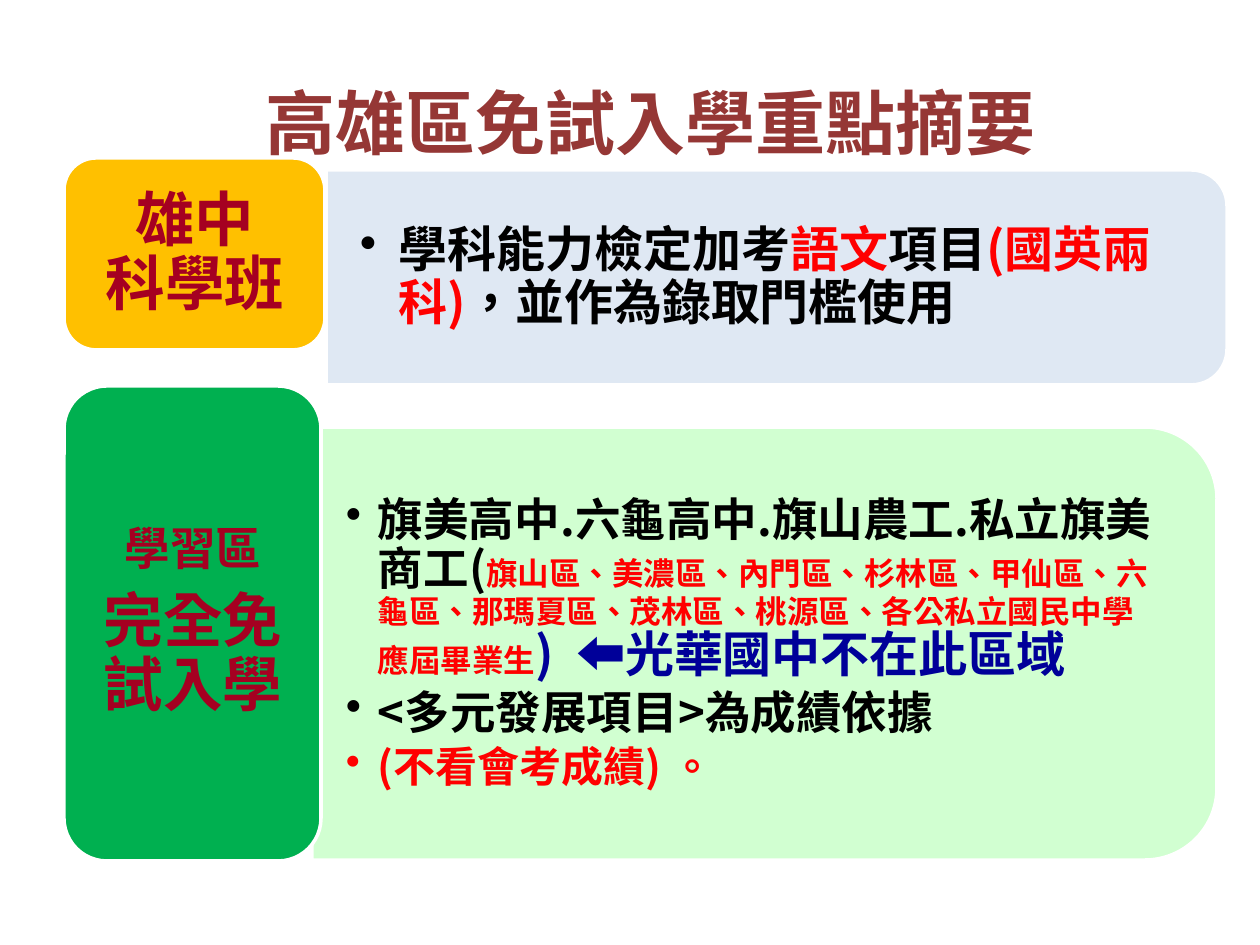
from dataclasses import dataclass

from lxml.etree import SubElement
from pptx import Presentation
from pptx.dml.color import RGBColor
from pptx.enum.shapes import MSO_SHAPE as Shape
from pptx.enum.text import MSO_ANCHOR as Anchor, PP_ALIGN as Align
from pptx.oxml.ns import qn
from pptx.util import Emu, Pt

EMU_PER_PX = 914400 / 126


@dataclass(frozen=True)
class Theme:
    """Colours, fonts and type sizes of the slide."""
    font: str = "Noto Sans CJK SC"
    title_font: str = "Calibri"
    title: str = "953735"
    label: str = "A50021"
    body: str = "000000"
    accent: str = "FF0000"
    remark: str = "000099"
    border: str = "FFFFFF"
    gold: str = "FFC000"
    green: str = "00B050"
    pale_blue: str = "DCE6F2"
    pale_green: str = "CCFFCC"
    title_size: int = 40
    label_size: int = 34
    large: int = 28
    medium: int = 26
    small: int = 24
    detail: int = 18


THEME = Theme()


def px(length):
    """Turn pixels into EMU."""
    return Emu(round(length * EMU_PER_PX))


def apply(target, values):
    """Set attributes from a dict of format values."""
    for name, value in values.items():
        setattr(target, name, value)


def add_block(page, kind, box, color, rotation=0, opacity=None):
    """Add a filled shape with a white border."""
    block = page.shapes.add_shape(kind, *map(px, box))
    block.shadow.inherit = False
    block.rotation = rotation
    block.fill.solid()
    block.fill.fore_color.rgb = RGBColor.from_string(color)
    block.line.color.rgb = RGBColor.from_string(THEME.border)
    block.line.width = Pt(2)
    if opacity:
        tint = block.fill._xPr.find(qn("a:solidFill"))[0]
        SubElement(tint, qn("a:alpha"), val=str(opacity * 1000))


def add_panel(page, box, color):
    """Add a panel whose two rounded corners face right."""
    left, top, width, height = box
    shift = (width - height) / 2
    upright = (left + shift, top - shift, height, width)
    add_block(page, Shape.ROUND_2_SAME_RECTANGLE, upright, color, 90, 90)


def set_space_after(para, percent):
    """Give the paragraph a proportional space after."""
    para.space_after = Pt(0)
    space = para._p.pPr.find(qn("a:spcAft"))
    space.remove(space[0])
    SubElement(space, qn("a:spcPct"), val=str(percent * 1000))


def set_bullet(para, indent):
    """Give the paragraph a round bullet with a hanging indent."""
    para.level = 1
    props = para._p.get_or_add_pPr()
    props.set("marL", str(px(indent)))
    props.set("indent", str(-px(indent)))
    SubElement(props, qn("a:buChar"), char="•")


def add_span(para, text, size, color, font):
    """Add one bold run of text."""
    span = para.add_run()
    span.text = text
    apply(span.font, {"size": Pt(size), "bold": True, "name": font})
    span.font.color.rgb = RGBColor.from_string(color)
    props = span._r.get_or_add_rPr()
    props.set("lang", "zh-TW")
    SubElement(props, qn("a:ea"), typeface=THEME.font)


def add_text(page, box, paras, inset, anchor=Anchor.MIDDLE, font=THEME.font,
             spacing=0.9, after=None, indent=None):
    """Add a text box whose paragraphs are lists of runs."""
    frame = page.shapes.add_textbox(*map(px, box)).text_frame
    left, top, right, bottom = map(px, inset)
    apply(frame, {"word_wrap": True, "vertical_anchor": anchor,
                  "margin_left": left, "margin_top": top,
                  "margin_right": right, "margin_bottom": bottom})
    for index, spans in enumerate(paras):
        para = frame.add_paragraph() if index else frame.paragraphs[0]
        apply(para, {"line_spacing": spacing,
                     "alignment": Align.LEFT if indent else Align.CENTER})
        if after:
            set_space_after(para, after)
        if indent:
            set_bullet(para, indent)
        for text, size, color in spans:
            add_span(para, text, size, color, font)


def add_science_class(page):
    """Add the row on the science class."""
    size = THEME.large
    add_panel(page, (326, 170, 901, 215), THEME.pale_blue)
    add_text(page, (326, 181, 891, 194), [[
        ("學科能力檢定加考", size, THEME.body),
        ("語文", size, THEME.accent),
        ("項目", size, THEME.body),
        ("(國英兩科)", size, THEME.accent),
        ("，並作為錄取門檻使用", size, THEME.body),
    ]], (34, 18, 34, 18), after=15, indent=39)
    add_block(page, Shape.ROUNDED_RECTANGLE, (64, 158, 261, 192), THEME.gold)
    add_text(page, (74, 168, 242, 173), [
        [(line, THEME.label_size, THEME.label)] for line in ("雄中", "科學班")
    ], (18, 9, 18, 9))


def add_learning_area(page):
    """Add the row on the learning area."""
    add_panel(page, (312, 427, 905, 433), THEME.pale_green)
    add_text(page, (312, 449, 883, 391), [
        [("旗美高中.六龜高中.旗山農工.私立旗美商工(", THEME.medium, THEME.body),
         ("旗山區、美濃區、內門區、杉林區、甲仙區、六龜區、那瑪夏區、茂林區、"
          "桃源區、各公私立國民中學應屆畢業生", THEME.detail, THEME.accent),
         (")  ⬅光華國中不在此區域", THEME.large, THEME.remark)],
        [("<多元發展項目>為成績依據", THEME.medium, THEME.body)],
        [("(不看會考成績) 。", THEME.small, THEME.accent)],
    ], (34, 18, 34, 18), after=15, indent=32)
    add_block(page, Shape.ROUNDED_RECTANGLE, (64, 386, 257, 475), THEME.green)
    add_text(page, (77, 398, 232, 450), [
        [("學習區", THEME.medium, THEME.label)],
        [("完全免試入學", THEME.label_size, THEME.label)],
    ], (14, 6, 14, 6), after=35)


def main():
    """Build and save the slide."""
    deck = Presentation()
    apply(deck, {"slide_width": px(1260), "slide_height": px(945)})
    page = deck.slides.add_slide(deck.slide_layouts[6])
    add_science_class(page)
    add_learning_area(page)
    add_text(page, (115, 18, 1071, 158),
             [[("高雄區免試入學重點摘要", THEME.title_size, THEME.title)]],
             (13, 6, 13, 13), Anchor.BOTTOM, THEME.title_font, spacing=1.0)
    deck.save("out.pptx")


if __name__ == "__main__":
    main()
